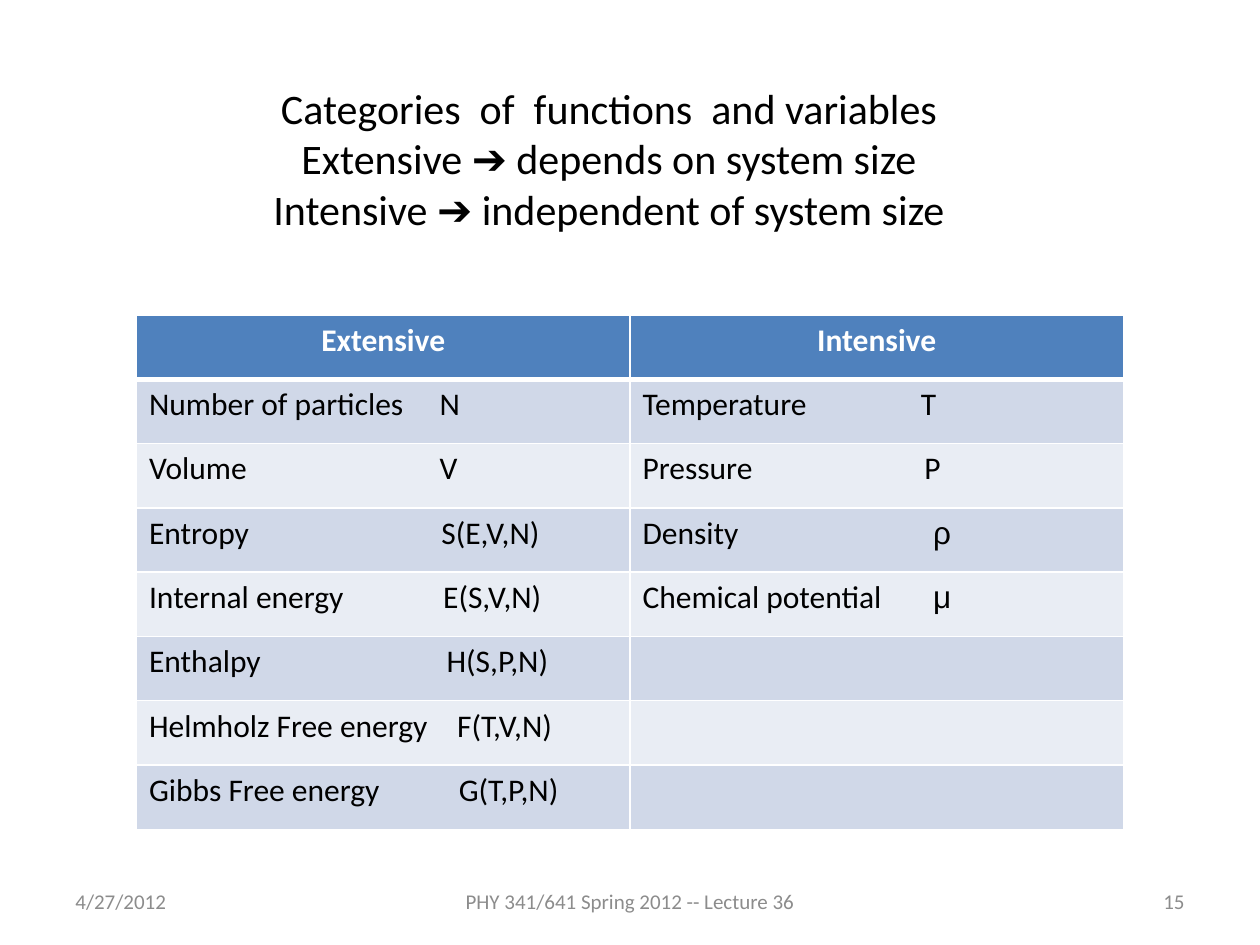
from itertools import zip_longest

from lxml.etree import SubElement
from pptx import Presentation
from pptx.dml.color import RGBColor
from pptx.enum.text import MSO_ANCHOR, PP_ALIGN
from pptx.oxml.ns import qn
from pptx.util import Pt

BLACK, WHITE, GREY = "000000", "FFFFFF", "8C8C8C"
HEADER_FILL = "4F81BD"
BAND_FILLS = ["D0D8E8", "E9EDF4"]

TITLE = """Categories  of  functions  and variables
Extensive ➔ depends on system size
Intensive ➔ independent of system size"""

# Quantity, symbol, tab stop of the symbol, symbol font
EXTENSIVE = [
    ("Number of particles", "N", 166, "Calibri"),
    ("Volume", "V", 166, "Calibri"),
    ("Entropy", "S(E,V,N)", 167, "Calibri"),
    ("Internal energy", "E(S,V,N)", 168, "Calibri"),
    ("Enthalpy", "H(S,P,N)", 170, "Calibri"),
    ("Helmholz Free energy", "F(T,V,N)", 176, "Calibri"),
    ("Gibbs Free energy", "G(T,P,N)", 177, "Calibri"),
]
INTENSIVE = [
    ("Temperature", "T", 159, "Calibri"),
    ("Pressure", "P", 161, "Calibri"),
    ("Density", "ρ", 166, "Arial"),
    ("Chemical potential", "μ", 166, "Arial"),
]


def rgb(hex_color):
    return RGBColor.from_string(hex_color)


def format_run(run, size, color, bold=False, font="Calibri"):
    run.font.name = font
    run.font.size = Pt(size)
    run.font.bold = bold
    run.font.color.rgb = rgb(color)


def add_text(slide, box, text, size, color, align, anchor):
    frame = slide.shapes.add_textbox(*map(Pt, box)).text_frame
    frame.word_wrap = True
    frame.vertical_anchor = anchor
    frame.text = text
    for paragraph in frame.paragraphs:
        paragraph.alignment = align
        for run in paragraph.runs:
            format_run(run, size, color)


def style_cell(cell, fill, top=1, bottom=1):
    properties = cell._tc.get_or_add_tcPr()
    for side, width in (("L", 1), ("R", 1), ("T", top), ("B", bottom)):
        border = SubElement(properties, qn(f"a:ln{side}"), w=str(Pt(width)))
        solid = SubElement(border, qn("a:solidFill"))
        SubElement(solid, qn("a:srgbClr"), val=WHITE)
    cell.fill.solid()
    cell.fill.fore_color.rgb = rgb(fill)


def write_heading(cell, heading):
    paragraph = cell.text_frame.paragraphs[0]
    paragraph.text = heading
    paragraph.alignment = PP_ALIGN.CENTER
    format_run(paragraph.runs[0], 18, WHITE, bold=True)


def write_quantity(cell, name, symbol, stop, symbol_font):
    paragraph = cell.text_frame.paragraphs[0]
    paragraph.text = f"{name}\t"
    format_run(paragraph.runs[0], 18, BLACK)
    symbol_run = paragraph.add_run()
    symbol_run.text = symbol
    format_run(symbol_run, 18, BLACK, font=symbol_font)
    # Tab stop that places the symbol
    tabs = SubElement(paragraph._p.get_or_add_pPr(), qn("a:tabLst"))
    SubElement(tabs, qn("a:tab"), pos=str(Pt(stop)), algn="l")


def add_quantity_table(slide):
    rows = list(zip_longest(EXTENSIVE, INTENSIVE))
    table = slide.shapes.add_table(
        len(rows) + 1, 2, Pt(78), Pt(180), Pt(564), Pt(294)).table

    # Header row
    for cell, heading in zip(table.rows[0].cells, ("Extensive", "Intensive")):
        style_cell(cell, HEADER_FILL, bottom=3)
        write_heading(cell, heading)

    # Banded body rows
    for index, quantities in enumerate(rows):
        for column, quantity in enumerate(quantities):
            cell = table.cell(index + 1, column)
            style_cell(cell, BAND_FILLS[index % 2], top=1 if index else 3)
            if quantity:
                write_quantity(cell, *quantity)


def add_footer(slide):
    for left, width, text, align in (
        (36, 168, "4/27/2012", PP_ALIGN.LEFT),
        (246, 228, "PHY 341/641 Spring 2012 -- Lecture 36", PP_ALIGN.CENTER),
        (516, 168, "15", PP_ALIGN.RIGHT),
    ):
        add_text(slide, (left, 500.5, width, 28.75), text, 12, GREY, align,
                 MSO_ANCHOR.MIDDLE)


def main():
    presentation = Presentation()
    presentation.slide_width, presentation.slide_height = Pt(720), Pt(540)
    slide = presentation.slides.add_slide(presentation.slide_layouts[6])
    add_footer(slide)
    add_text(slide, (102, 43.5, 492, 123.5), TITLE, 24, BLACK,
             PP_ALIGN.CENTER, MSO_ANCHOR.TOP)
    add_quantity_table(slide)
    presentation.save("out.pptx")


if __name__ == "__main__":
    main()
